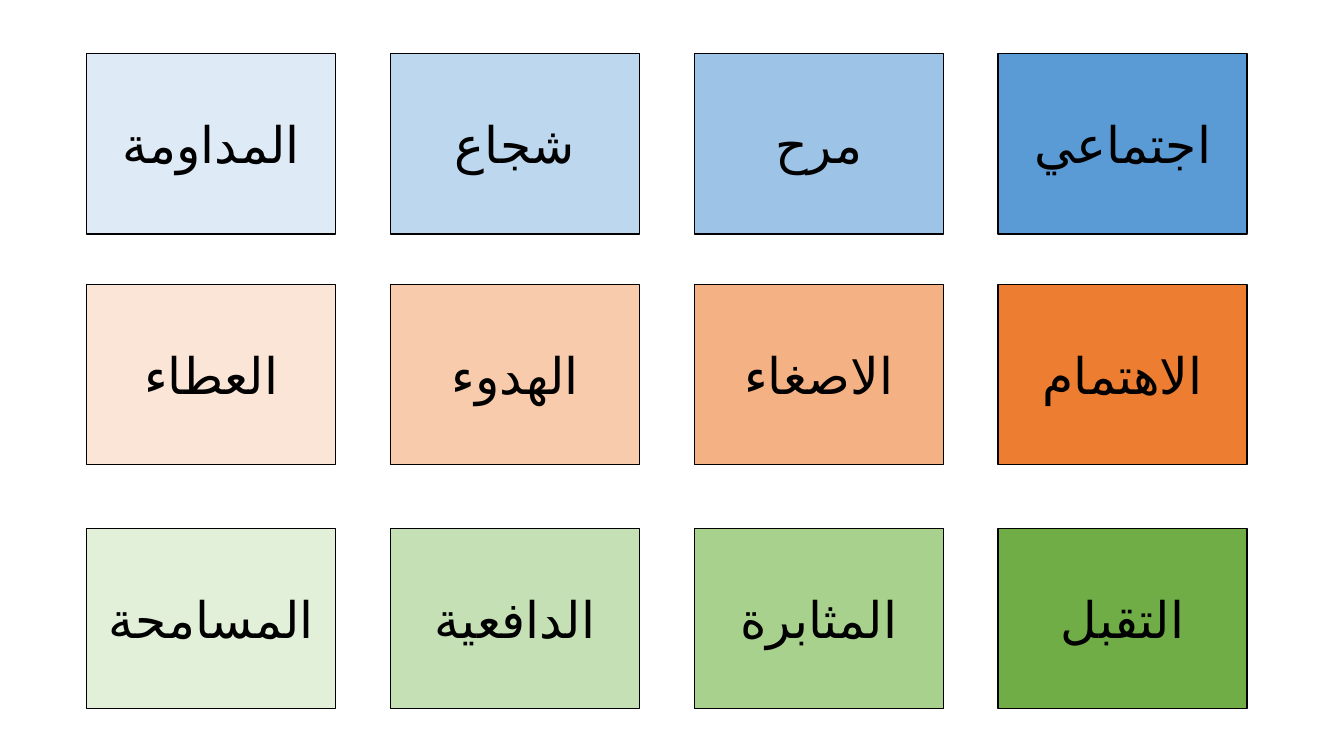
from dataclasses import dataclass

from lxml.etree import SubElement
from pptx import Presentation
from pptx.dml.color import RGBColor
from pptx.enum.lang import MSO_LANGUAGE_ID
from pptx.enum.shapes import MSO_SHAPE
from pptx.enum.text import MSO_ANCHOR, PP_ALIGN
from pptx.oxml.ns import qn
from pptx.util import Inches, Pt


@dataclass(frozen=True)
class Theme:
    font: str = "Arial"
    trait_size: int = 36
    ink: str = "000000"
    border: float = 1
    blues: tuple = ("5B9BD5", "9DC3E6", "BDD7EE", "DEEBF7")
    oranges: tuple = ("ED7D31", "F4B183", "F8CBAD", "FBE5D6")
    greens: tuple = ("70AD47", "A9D18E", "C5E0B4", "E2F0D9")


class TraitSlide:
    CARD_WIDTH, CARD_HEIGHT = 2.47, 1.79
    FIRST_LEFT, LAST_LEFT = 9.9, 0.86

    def __init__(self, slide, theme):
        self.slide = slide
        self.theme = theme

    def card(self, trait, left, top, shade):
        theme = self.theme
        card = self.slide.shapes.add_shape(
            MSO_SHAPE.RECTANGLE, Inches(left), Inches(top),
            Inches(self.CARD_WIDTH), Inches(self.CARD_HEIGHT))
        card.shadow.inherit = False
        card.fill.solid()
        card.fill.fore_color.rgb = RGBColor.from_string(shade)
        card.line.color.rgb = RGBColor.from_string(theme.ink)
        card.line.width = Pt(theme.border)
        card.text_frame.vertical_anchor = MSO_ANCHOR.MIDDLE
        label = card.text_frame.paragraphs[0]
        label.text = trait
        label.runs[0].font.language_id = MSO_LANGUAGE_ID.ARABIC
        label.alignment = PP_ALIGN.CENTER
        label.font.size = Pt(theme.trait_size)
        label.font.name = theme.font
        label.font.color.rgb = RGBColor.from_string(theme.ink)
        properties = label._p.get_or_add_pPr()
        properties.set("rtl", "1")
        SubElement(properties.find(qn("a:defRPr")), qn("a:cs"), typeface=theme.font)

    def row(self, top, traits, shades):
        step = (self.FIRST_LEFT - self.LAST_LEFT) / (len(traits) - 1)
        for column, (trait, shade) in enumerate(zip(traits, shades)):
            self.card(trait, self.FIRST_LEFT - column * step, top, shade)


def main():
    presentation = Presentation()
    presentation.slide_width = Inches(13.33)
    presentation.slide_height = Inches(7.5)
    theme = Theme()
    blank_layout = presentation.slide_layouts.get_by_name("Blank")
    board = TraitSlide(presentation.slides.add_slide(blank_layout), theme)
    board.row(0.53, ("اجتماعي", "مرح", "شجاع", "المداومة"), theme.blues)
    board.row(2.82, ("الاهتمام", "الاصغاء", "الهدوء", "العطاء"), theme.oranges)
    board.row(5.24, ("التقبل", "المثابرة", "الدافعية", "المسامحة"), theme.greens)
    presentation.save("out.pptx")


if __name__ == "__main__":
    main()
